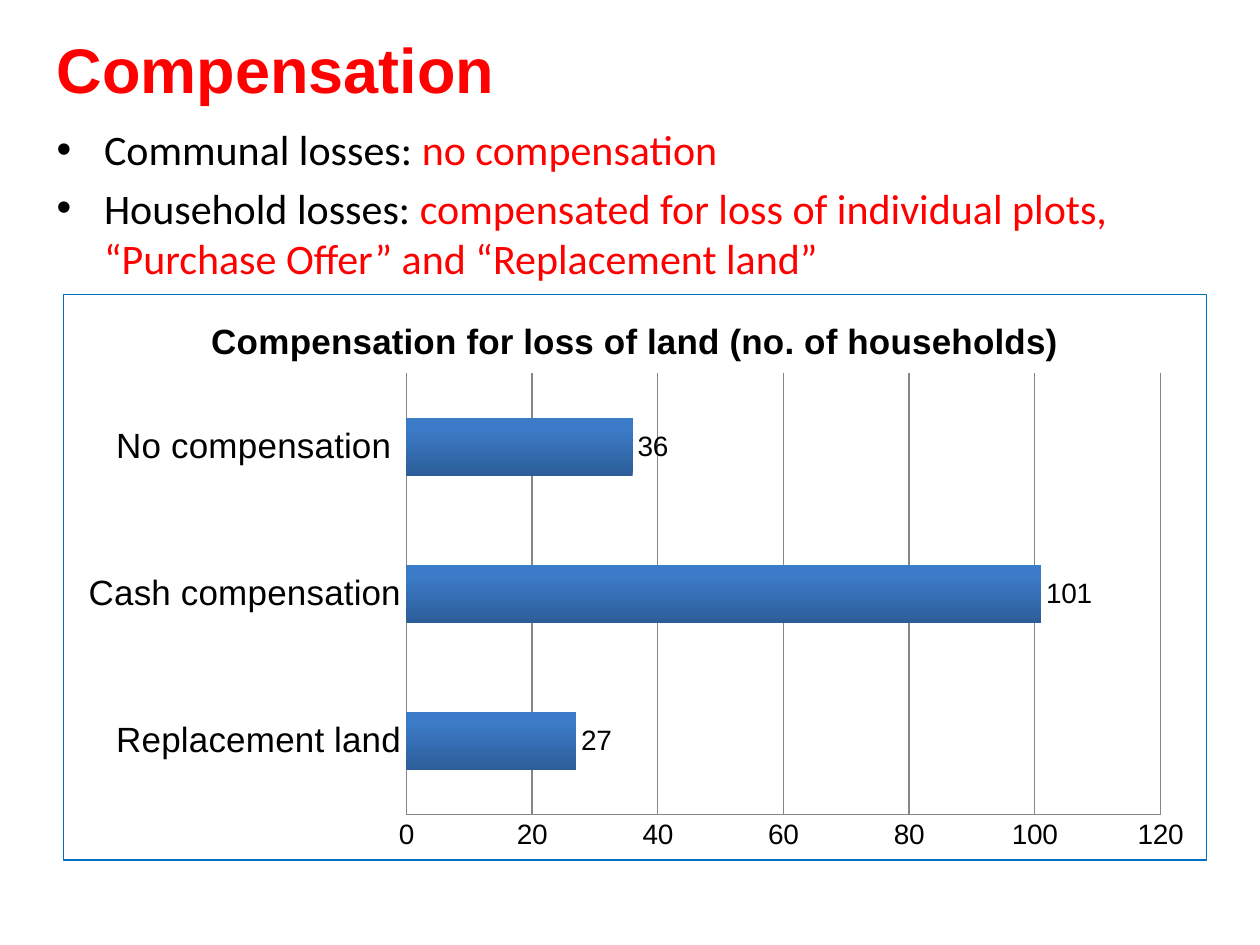
from lxml.etree import SubElement
from pptx import Presentation
from pptx.chart.data import CategoryChartData
from pptx.dml.color import RGBColor
from pptx.enum.chart import XL_CHART_TYPE, XL_LABEL_POSITION, XL_TICK_MARK
from pptx.enum.text import MSO_ANCHOR, PP_ALIGN
from pptx.oxml import parse_xml
from pptx.oxml.ns import nsdecls, qn
from pptx.util import Cm, Pt

COLORS = {"text": "000000", "accent": "FF0000", "border": "0070C0", "grid": "868686",
          "bar_dark": "2C5D98", "bar_light": "3C7BC7"}

TITLE_BOX = (0.89, 0.33, 23.04, 2.11)
BODY_BOX = (0.89, 2.36, 23.67, 15.42)
CHART_BOX = (1.27, 5.92, 23.06, 11.43)
PLOT_LAYOUT = {"x": 0.3, "y": 0.14, "w": 0.66, "h": 0.78}

BULLETS = [
    ("Communal losses: ", "no compensation"),
    ("Household losses: ",
     "compensated for loss of individual plots, “Purchase Offer” and “Replacement land”"),
]
HOUSEHOLDS = {"Replacement land": 27, "Cash compensation": 101, "No compensation ": 36}


def rgb(name):
    return RGBColor.from_string(COLORS[name])


def format_font(font, size, color="text", name="Arial", bold=False):
    for attr, value in {"size": Pt(size), "name": name, "bold": bold}.items():
        setattr(font, attr, value)
    font.color.rgb = rgb(color)


def place(sp, box):
    for attr, value in zip(("left", "top", "width", "height"), box):
        setattr(sp, attr, Cm(value))


def add_title(s, box):
    sp = s.shapes.title
    place(sp, box)
    tf = sp.text_frame
    tf.vertical_anchor = MSO_ANCHOR.MIDDLE
    p = tf.paragraphs[0]
    p.alignment = PP_ALIGN.LEFT
    r = p.add_run()
    r.text = "Compensation"
    format_font(r.font, 36, "accent", bold=True)


def add_bullets(s, box):
    sp = s.placeholders[1]
    place(sp, box)
    tf = sp.text_frame
    for i, parts in enumerate(BULLETS):
        p = tf.add_paragraph() if i else tf.paragraphs[0]
        for text, color in zip(parts, ("text", "accent")):
            r = p.add_run()
            r.text = text
            format_font(r.font, 24, color, "Calibri")


def format_axis(axis, size):
    axis.major_tick_mark = axis.minor_tick_mark = XL_TICK_MARK.NONE
    axis.format.line.color.rgb = rgb("grid")
    format_font(axis.tick_labels.font, size)


def set_plot_layout(chart):
    """Fix the inner plot area as fractions of the chart."""
    area = chart._chartSpace.chart.plotArea
    for old in area.findall(qn("c:layout")):
        area.remove(old)
    layout = parse_xml(f"<c:layout {nsdecls('c')}/>")
    manual = SubElement(layout, qn("c:manualLayout"))
    values = {"layoutTarget": "inner", "xMode": "edge", "yMode": "edge", **PLOT_LAYOUT}
    for tag, value in values.items():
        SubElement(manual, qn(f"c:{tag}")).set("val", str(value))
    area.insert(0, layout)


def set_border(chart):
    """Outline the chart; its text properties must already exist."""
    border = parse_xml(
        f'<c:spPr {nsdecls("c", "a")}><a:noFill/><a:ln w="9525"><a:solidFill>'
        f'<a:srgbClr val="{COLORS["border"]}"/></a:solidFill></a:ln></c:spPr>')
    chart._chartSpace.find(qn("c:txPr")).addprevious(border)


def add_households_chart(s, box):
    data = CategoryChartData()
    data.categories = list(HOUSEHOLDS)
    data.add_series("Series 1", list(HOUSEHOLDS.values()))
    chart = s.shapes.add_chart(XL_CHART_TYPE.BAR_CLUSTERED, *map(Cm, box), data).chart
    chart.has_legend = False
    format_font(chart.font, 10, name="Calibri")

    p = chart.chart_title.text_frame.paragraphs[0]
    r = p.add_run()
    r.text = "Compensation for loss of land (no. of households)"
    format_font(r.font, 20, bold=True)
    chart.chart_title.include_in_layout = False

    format_axis(chart.category_axis, 20)
    values = chart.value_axis
    format_axis(values, 16)
    for attr, value in {"minimum_scale": 0, "maximum_scale": 120, "major_unit": 20}.items():
        setattr(values, attr, value)
    values.major_gridlines.format.line.color.rgb = rgb("grid")

    plot = chart.plots[0]
    plot.gap_width = 150
    plot.vary_by_categories = False
    fill = plot.series[0].format.fill
    fill.gradient()
    fill.gradient_angle = 90
    for stop, color, position in zip(fill.gradient_stops, ("bar_dark", "bar_light"), (0, 0.8)):
        stop.color.rgb = rgb(color)
        stop.position = position

    labels = plot.series[0].data_labels
    labels.show_value = True
    labels.position = XL_LABEL_POSITION.OUTSIDE_END
    format_font(labels.font, 16)
    set_plot_layout(chart)
    set_border(chart)


def main():
    prs = Presentation()
    prs.slide_width, prs.slide_height = Cm(25.4), Cm(19.05)
    s = prs.slides.add_slide(prs.slide_layouts[1])
    add_bullets(s, BODY_BOX)
    add_title(s, TITLE_BOX)
    add_households_chart(s, CHART_BOX)
    prs.save("out.pptx")


if __name__ == "__main__":
    main()
